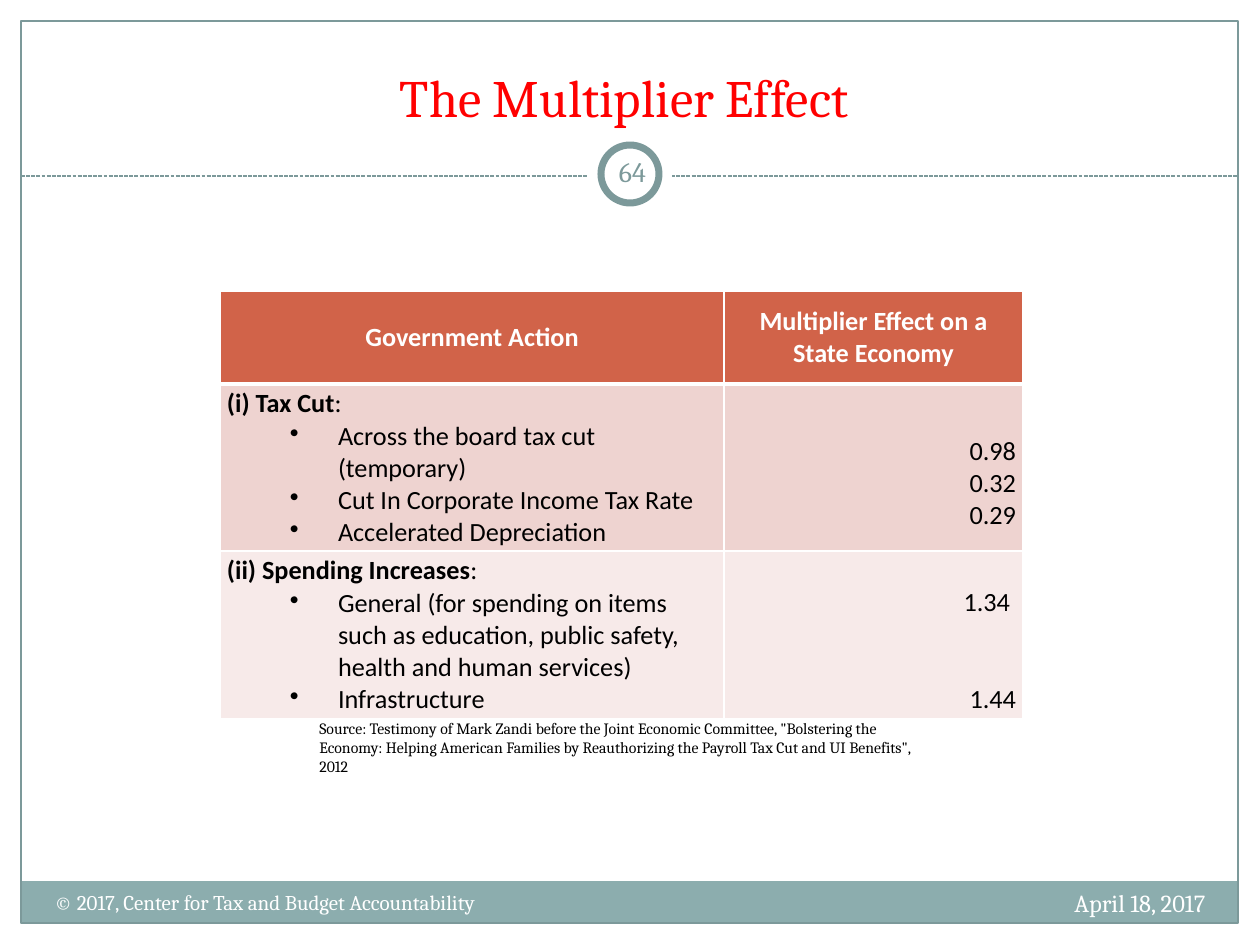
"""Builds a slide with a table of multiplier effects of state tax and spending actions."""
from pptx import Presentation
from pptx.dml.color import RGBColor
from pptx.enum.dml import MSO_LINE
from pptx.enum.shapes import MSO_CONNECTOR, MSO_SHAPE
from pptx.enum.text import MSO_ANCHOR, PP_ALIGN
from pptx.oxml.xmlchemy import OxmlElement
from pptx.util import Emu, Pt

LEFT, CENTER, RIGHT = PP_ALIGN.LEFT, PP_ALIGN.CENTER, PP_ALIGN.RIGHT
TOP, MIDDLE, BOTTOM = MSO_ANCHOR.TOP, MSO_ANCHOR.MIDDLE, MSO_ANCHOR.BOTTOM
RECTANGLE, OVAL = MSO_SHAPE.RECTANGLE, MSO_SHAPE.OVAL
STRAIGHT, SHORT_DASH = MSO_CONNECTOR.STRAIGHT, MSO_LINE.SQUARE_DOT

WHITE = RGBColor(0xFF, 0xFF, 0xFF)
BLACK = RGBColor(0, 0, 0)
RED = RGBColor(0xFF, 0, 0)
TEAL = RGBColor(0x7C, 0x99, 0x9A)
FOOTER_TEAL = RGBColor(0x8C, 0xAD, 0xAE)
HEADER_ORANGE = RGBColor(0xD1, 0x63, 0x49)
ROW_FILLS = (RGBColor(0xEE, 0xD3, 0xD0), RGBColor(0xF7, 0xEA, 0xE9))

TITLE = "The Multiplier Effect "
SLIDE_NUMBER = "64"
DATE = "April 18, 2017"
COPYRIGHT = "© 2017, Center for Tax and Budget Accountability"
SOURCE = (
    'Source: Testimony of Mark Zandi before the Joint Economic Committee, "Bolstering the '
    'Economy: Helping American Families by Reauthorizing the Payroll Tax Cut and UI Benefits", 2012'
)
HEADERS = ("Government Action", "Multiplier Effect on a State Economy")
GROUPS = [
    {
        "name": "(i) Tax Cut",
        "actions": ["Across the board tax cut (temporary)", "Cut In Corporate Income Tax Rate",
                    "Accelerated Depreciation"],
        "values": ["0.98", "0.32", "0.29"],
        "lines_between": 0,
        "anchor": MIDDLE,
    },
    {
        "name": "(ii) Spending Increases",
        "actions": ["General (for spending on items such as education, public safety, "
                    "health and human services)", "Infrastructure"],
        "values": ["1.34 ", "1.44"],
        "lines_between": 2,
        "anchor": TOP,
    },
]

COLUMN_WIDTHS = (504, 299)
ROW_HEIGHTS = (93, 167, 168)
TABLE_LEFT, TABLE_TOP = 220, 291
LINE_HEIGHT = 32
CELL_MARGIN_X, CELL_MARGIN_Y = 7, 4
BULLET_INDENT, BULLET_HANG = 111, 48


def px(length):
    return Emu(round(length * 914400 / 126))


def write(paragraph, *texts, size, font="Cambria", color=BLACK, bold=False, align=LEFT,
          bullet=False, space_before=0):
    if bullet:
        paragraph.level = 1
        properties = paragraph._p.get_or_add_pPr()
        properties.set("marL", str(px(BULLET_INDENT)))
        properties.set("indent", str(-px(BULLET_HANG)))
        mark = OxmlElement("a:buChar")
        mark.set("char", "•")
        properties.append(mark)
    paragraph.alignment = align
    if space_before:
        paragraph.space_before = px(space_before)
    for index, text in enumerate(texts):
        run = paragraph.add_run()
        run.text = text
        run.font.name = font
        run.font.size = Pt(size)
        run.font.color.rgb = color
        run.font.bold = bold and index == 0


def add_text(slide, box, text, anchor=TOP, inset=None, **text_format):
    frame = slide.shapes.add_textbox(*map(px, box)).text_frame
    frame.word_wrap = True
    frame.vertical_anchor = anchor
    if inset is not None:
        frame.margin_left = frame.margin_right = px(inset)
    write(frame.paragraphs[0], text, **text_format)


def add_shape(slide, kind, box, fill=None, line=None, width=0.75):
    shape = slide.shapes.add_shape(kind, *map(px, box))
    shape.shadow.inherit = False
    if fill is None:
        shape.fill.background()
    else:
        shape.fill.solid()
        shape.fill.fore_color.rgb = fill
    if line is None:
        shape.line.fill.background()
    else:
        shape.line.color.rgb = line
        shape.line.width = Pt(width)


def format_cell(cell, fill, anchor, top_width=1, bottom_width=1, lines_above=0):
    properties = cell._tc.get_or_add_tcPr()
    for side, width in (("L", 1), ("R", 1), ("T", top_width), ("B", bottom_width)):
        border = OxmlElement(f"a:ln{side}")
        border.set("w", str(Pt(width)))
        solid = OxmlElement("a:solidFill")
        color = OxmlElement("a:srgbClr")
        color.set("val", str(WHITE))
        solid.append(color)
        border.append(solid)
        properties.append(border)
    cell.fill.solid()
    cell.fill.fore_color.rgb = fill
    cell.vertical_anchor = anchor
    cell.margin_left = cell.margin_right = px(CELL_MARGIN_X)
    cell.margin_top = px(CELL_MARGIN_Y + lines_above * LINE_HEIGHT)
    cell.margin_bottom = px(CELL_MARGIN_Y)


def add_multiplier_table(slide):
    table = slide.shapes.add_table(
        len(ROW_HEIGHTS), len(COLUMN_WIDTHS), px(TABLE_LEFT), px(TABLE_TOP),
        px(sum(COLUMN_WIDTHS)), px(sum(ROW_HEIGHTS))).table
    table.horz_banding = False
    for column, width in zip(table.columns, COLUMN_WIDTHS):
        column.width = px(width)
    for row, height in zip(table.rows, ROW_HEIGHTS):
        row.height = px(height)

    body = {"size": 15, "font": "Calibri"}
    for cell, header in zip(table.rows[0].cells, HEADERS):
        format_cell(cell, HEADER_ORANGE, MIDDLE, bottom_width=3)
        write(cell.text_frame.paragraphs[0], header, color=WHITE, bold=True, align=CENTER, **body)

    for index, (group, fill) in enumerate(zip(GROUPS, ROW_FILLS)):
        action_cell, value_cell = table.rows[index + 1].cells
        top_width = 3 if index == 0 else 1
        format_cell(action_cell, fill, group["anchor"], top_width)
        format_cell(value_cell, fill, group["anchor"], top_width, lines_above=1)
        actions, values = action_cell.text_frame, value_cell.text_frame
        write(actions.paragraphs[0], group["name"], ":", bold=True, **body)
        for action in group["actions"]:
            write(actions.add_paragraph(), action, bullet=True, **body)
        first, *others = group["values"]
        write(values.paragraphs[0], first, align=RIGHT, **body)
        for value in others:
            write(values.add_paragraph(), value, align=RIGHT,
                  space_before=group["lines_between"] * LINE_HEIGHT, **body)


def main():
    presentation = Presentation()
    presentation.slide_width, presentation.slide_height = px(1260), px(945)
    slide = presentation.slides.add_slide(presentation.slide_layouts[5])

    title = slide.shapes.title
    title.left, title.top, title.width, title.height = map(px, (189, 39, 882, 95))
    title.text_frame.vertical_anchor = BOTTOM
    write(title.text_frame.paragraphs[0], TITLE, size=30, color=RED, align=CENTER)

    add_shape(slide, RECTANGLE, (21, 881, 1217, 43), fill=FOOTER_TEAL)
    add_shape(slide, RECTANGLE, (21, 21, 1217, 902), line=TEAL)
    divider = slide.shapes.add_connector(STRAIGHT, *map(px, (21, 176, 1238, 176)))
    divider.line.color.rgb = TEAL
    divider.line.width = Pt(0.75)
    divider.line.dash_style = SHORT_DASH
    divider._element.spPr.append(OxmlElement("a:effectLst"))
    add_shape(slide, OVAL, (588, 132, 84, 84), fill=WHITE)
    add_shape(slide, OVAL, (601, 145, 58, 58), fill=WHITE, line=TEAL, width=4)

    add_text(slide, (798, 882, 420, 50), DATE, size=14, color=WHITE, align=RIGHT)
    add_multiplier_table(slide)
    add_text(slide, (42, 883, 494, 50), COPYRIGHT, size=12, color=WHITE)
    add_text(slide, (307, 713, 644, 71), SOURCE, size=9)
    add_text(slide, (601, 141, 63, 60), SLIDE_NUMBER, anchor=MIDDLE, inset=6, size=16,
             color=TEAL, align=CENTER)
    presentation.save("out.pptx")


if __name__ == "__main__":
    main()
